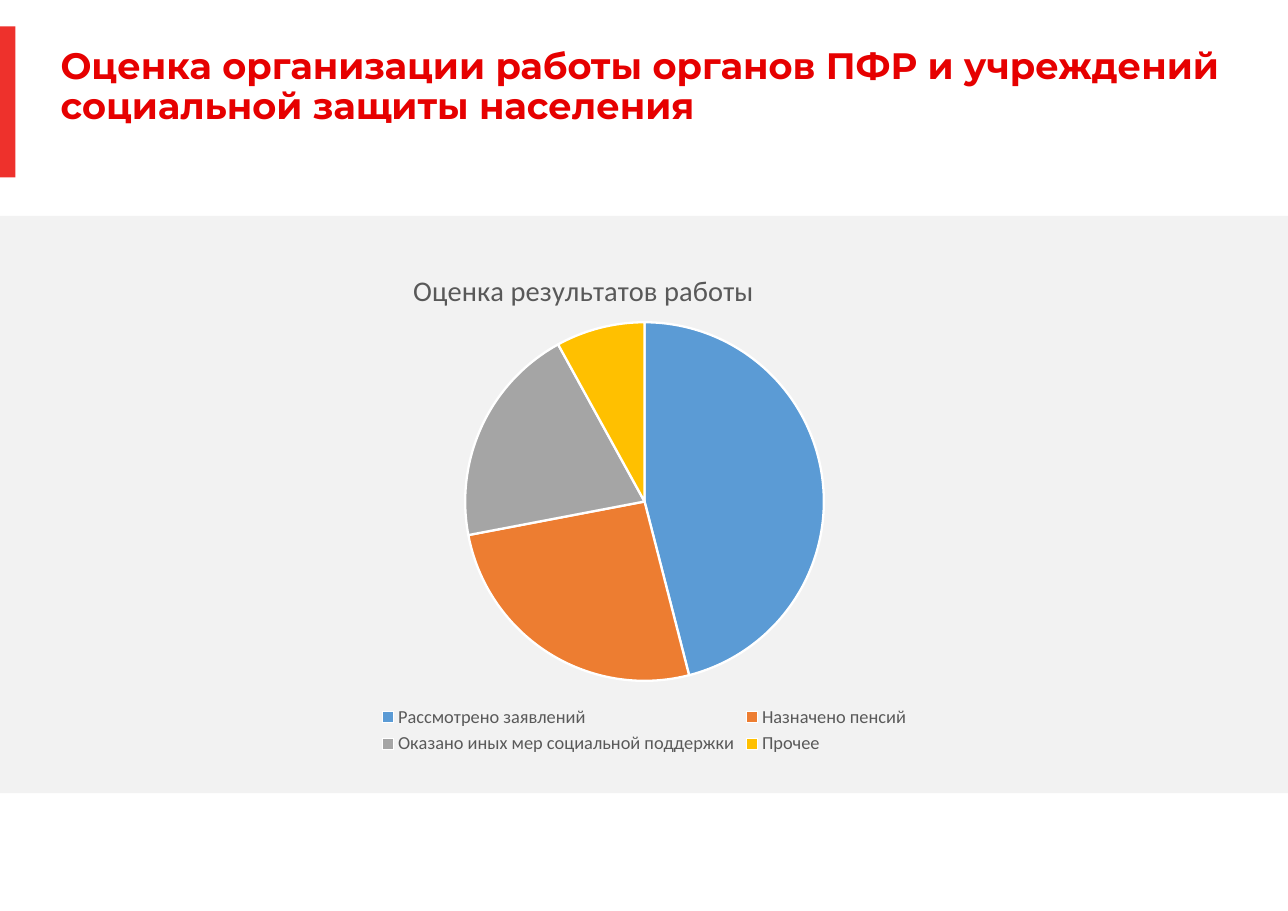
from dataclasses import dataclass

from lxml.etree import SubElement
from pptx import Presentation
from pptx.chart.data import CategoryChartData
from pptx.dml.color import RGBColor
from pptx.enum.chart import XL_CHART_TYPE, XL_LEGEND_POSITION
from pptx.enum.shapes import MSO_SHAPE
from pptx.enum.text import MSO_ANCHOR
from pptx.oxml.ns import qn
from pptx.util import Inches, Pt


@dataclass(frozen=True)
class Theme:
    """Colours, fonts and type sizes."""
    band: str = "F2F2F2"
    mark: str = "EE312C"
    head: str = "E60000"
    grey: str = "595959"
    white: str = "FFFFFF"
    tones: tuple = ("5B9BD5", "ED7D31", "A5A5A5", "FFC000")
    bold: str = "Montserrat"
    body: str = "Calibri"
    large: float = 24
    mid: float = 18.6
    small: float = 12


class Deck:
    """Draws styled elements on the current slide."""

    def __init__(self, theme, wide, high):
        self.theme = theme
        self.file = Presentation()
        self.put(self.file, {"slide_width": Inches(wide), "slide_height": Inches(high)})
        self.slide = self.file.slides.add_slide(self.file.slide_layouts[6])

    def put(self, item, form):
        for name, value in form.items():
            setattr(item, name, value)

    def paint(self, fill, tone):
        fill.solid()
        fill.fore_color.rgb = RGBColor.from_string(tone)

    def type(self, font, face, size, tone, bold=False):
        self.put(font, {"name": face, "size": Pt(size), "bold": bold})
        font.color.rgb = RGBColor.from_string(tone)

    def block(self, box, tone):
        shape = self.slide.shapes.add_shape(MSO_SHAPE.RECTANGLE, *map(Inches, box))
        shape.shadow.inherit = False
        self.paint(shape.fill, tone)
        shape.line.fill.background()

    def title(self, box, text):
        frame = self.slide.shapes.add_textbox(*map(Inches, box)).text_frame
        edges = ("left", "top", "right", "bottom")
        self.put(frame, {"word_wrap": True, "vertical_anchor": MSO_ANCHOR.MIDDLE,
                         **{f"margin_{edge}": 0 for edge in edges}})
        line = frame.paragraphs[0]
        line.text, line.line_spacing = text, 0.9
        self.type(line.font, self.theme.bold, self.theme.large, self.theme.head, True)

    def place(self, item, index, sizes, inner=False):
        for old in item.findall(qn("c:layout")):
            item.remove(old)
        layout = SubElement(item, qn("c:layout"))
        item.insert(index, layout)
        manual = SubElement(layout, qn("c:manualLayout"))
        target = {"layoutTarget": "inner"} if inner else {}
        for name, value in {**target, "xMode": "edge", "yMode": "edge", **sizes}.items():
            SubElement(manual, qn(f"c:{name}")).set("val", str(value))

    def pie(self, box, head, rows):
        theme = self.theme
        data = CategoryChartData()
        data.categories = list(rows)
        data.add_series("Series 1", list(rows.values()))
        chart = self.slide.shapes.add_chart(
            XL_CHART_TYPE.PIE, *map(Inches, box), data).chart
        self.type(chart.font, theme.body, theme.small, theme.grey)
        self.put(chart, {"has_title": True, "has_legend": True})
        frame = chart.chart_title.text_frame
        frame.text = head
        self.type(frame.paragraphs[0].runs[0].font, theme.body, theme.mid, theme.grey)
        self.put(chart.legend, {"position": XL_LEGEND_POSITION.BOTTOM,
                                "include_in_layout": False})
        self.type(chart.legend.font, theme.body, theme.small, theme.grey)
        plot = chart.plots[0]
        plot.vary_by_categories = True
        for index, tone in enumerate(theme.tones):
            form = plot.series[0].points[index].format
            self.paint(form.fill, tone)
            self.paint(form.line.fill, theme.white)
            form.line.width = Pt(1.5)
        root = chart.element
        self.place(root.find(f".//{qn('c:title')}"), 1, {"x": 0.21, "y": 0.05})
        self.place(root.find(f".//{qn('c:plotArea')}"), 0,
                   {"x": 0.28, "y": 0.16, "w": 0.44, "h": 0.69}, True)


def main():
    """Build and save the slide."""
    theme = Theme()
    deck = Deck(theme, 11.69, 8.27)
    deck.block((0, 1.96, 11.69, 5.24), theme.band)
    deck.block((0, 0.24, 0.14, 1.37), theme.mark)
    deck.title((0.55, 0.43, 10.59, 0.73),
               "Оценка организации работы органов ПФР и учреждений "
               "социальной защиты населения")
    deck.pie((2.15, 2.17, 7.4, 4.72), "Оценка результатов работы", {
        "Рассмотрено заявлений": 46,
        "Назначено пенсий": 26,
        "Оказано иных мер социальной поддержки": 20,
        "Прочее": 8,
    })
    deck.file.save("out.pptx")


if __name__ == "__main__":
    main()
